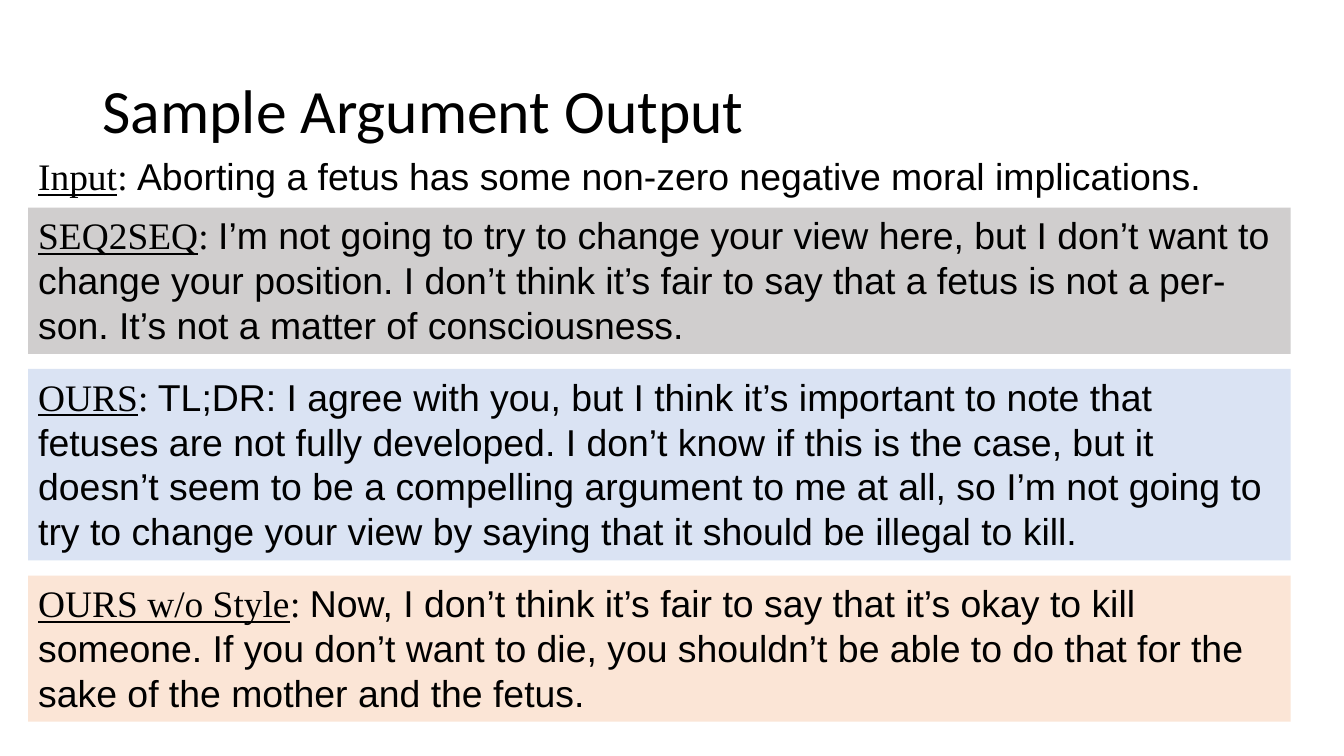
"""Build the slide that compares sample argument outputs."""
from pptx import Presentation
from pptx.dml.color import RGBColor
from pptx.enum.shapes import MSO_SHAPE
from pptx.enum.text import MSO_ANCHOR, PP_ALIGN
from pptx.util import Inches, Pt

TITLE = "Sample Argument Output"
PROMPT = ("Input", "Aborting a fetus has some non-zero negative moral implications.")
OUTPUTS = [
    ("SEQ2SEQ", "I’m not going to try to change your view here, but I don’t want to "
     "change your position. I don’t think it’s fair to say that a fetus is not a per- "
     "son. It’s not a matter of consciousness.", 1.45, "D0CECE"),
    ("OURS", "TL;DR: I agree with you, but I think it’s important to note that fetuses "
     "are not fully developed. I don’t know if this is the case, but it doesn’t seem to "
     "be a compelling argument to me at all, so I’m not going to try to change your view "
     "by saying that it should be illegal to kill.", 1.9, "DAE3F3"),
    ("OURS w/o Style", "Now, I don’t think it’s fair to say that it’s okay to kill "
     "someone. If you don’t want to die, you shouldn’t be able to do that for the sake "
     "of the mother and the fetus.", 1.45, "FBE5D6"),
]
LEFT, FIRST_TOP, GAP = 0.28, 2.06, 0.15


def color(value):
    return RGBColor.from_string(value)


def add_span(para, text, size, font, underline=False):
    span = para.add_run()
    span.text = text
    span.font.size = Pt(size)
    span.font.name = font
    span.font.underline = underline
    span.font.color.rgb = color("000000")


def add_panel(page, label, text, top, width, height, fill):
    panel = page.shapes.add_shape(MSO_SHAPE.RECTANGLE, Inches(LEFT), Inches(top),
                                  Inches(width), Inches(height))
    panel.shadow.inherit = False
    panel.fill.solid()
    panel.fill.fore_color.rgb = color(fill)
    panel.line.fill.background()
    frame = panel.text_frame
    frame.word_wrap = True
    frame.vertical_anchor = MSO_ANCHOR.TOP
    para = frame.paragraphs[0]
    para.alignment = PP_ALIGN.LEFT
    add_span(para, label, 26.7, "Times New Roman", True)
    add_span(para, ": ", 26.7, "Times New Roman")
    add_span(para, text, 26.7, "Arial")


def add_title(page):
    box = page.shapes.add_textbox(Inches(0.92), Inches(0.4), Inches(11.5), Inches(1.45))
    frame = box.text_frame
    frame.word_wrap = True
    frame.vertical_anchor = MSO_ANCHOR.MIDDLE
    para = frame.paragraphs[0]
    para.line_spacing = 0.9
    add_span(para, TITLE, 44, "Calibri")


def main():
    deck = Presentation()
    deck.slide_width, deck.slide_height = Inches(13.33), Inches(7.5)
    page = deck.slides.add_slide(deck.slide_layouts[6])
    add_title(page)
    add_panel(page, *PROMPT, 1.47, 12.78, 1, "FFFFFF")
    top = FIRST_TOP
    for label, text, height, fill in OUTPUTS:
        add_panel(page, label, text, top, 12.52, height, fill)
        top += height + GAP
    deck.save("out.pptx")


if __name__ == "__main__":
    main()
